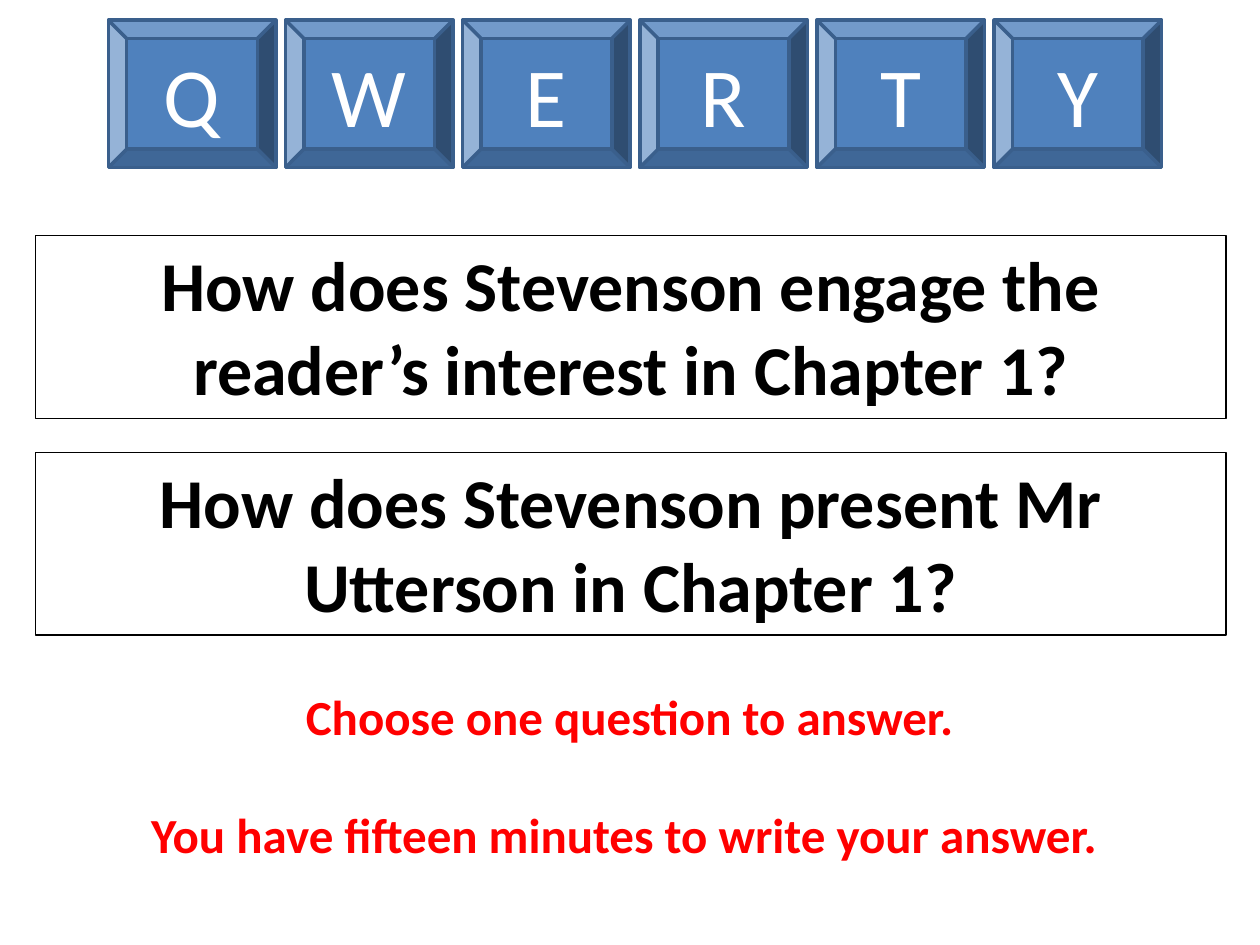
from pptx import Presentation
from pptx.dml.color import RGBColor
from pptx.enum.shapes import MSO_SHAPE as Shape
from pptx.enum.text import MSO_ANCHOR as Anchor, MSO_AUTO_SIZE as AutoSize, PP_ALIGN as Align
from pptx.util import Inches, Pt

# Content
KEYS = "QWERTY"
QUESTIONS = [
    "How does Stevenson engage the reader’s interest in Chapter 1?",
    "How does Stevenson present Mr Utterson in Chapter 1?",
]
INSTRUCTIONS = [
    "Choose one question to answer.",
    "You have fifteen minutes to write your answer. ",
]

FONT = "Calibri"
BLUE = RGBColor(0x4F, 0x81, 0xBD)
DARK_BLUE = RGBColor(0x3A, 0x5F, 0x8C)
WHITE = RGBColor(0xFF, 0xFF, 0xFF)
BLACK = RGBColor(0, 0, 0)
RED = RGBColor(0xFF, 0, 0)

# Layout in inches
KEY_LEFT, KEY_TOP, KEY_WIDTH, KEY_HEIGHT, KEY_STEP = 0.86, 0.16, 1.33, 1.17, 1.406
QUESTION_TOP, QUESTION_STEP = 1.87, 1.72


def write(paragraph, text, size, color, bold=False):
    paragraph.alignment = Align.CENTER
    run = paragraph.add_run()
    run.text = text
    run.font.name = FONT
    run.font.size = Pt(size)
    run.font.bold = bold
    run.font.color.rgb = color


def add_box(slide, left, top, width, height):
    box = slide.shapes.add_textbox(*map(Inches, (left, top, width, height)))
    box.text_frame.word_wrap = True
    box.text_frame.auto_size = AutoSize.SHAPE_TO_FIT_TEXT
    return box


def add_key(slide, left, letter):
    key = slide.shapes.add_shape(
        Shape.BEVEL, *map(Inches, (left, KEY_TOP, KEY_WIDTH, KEY_HEIGHT)))
    key.shadow.inherit = False
    key.fill.solid()
    key.fill.fore_color.rgb = BLUE
    key.line.color.rgb = DARK_BLUE
    key.line.width = Pt(2)
    key.text_frame.vertical_anchor = Anchor.MIDDLE
    write(key.text_frame.paragraphs[0], letter, 48, WHITE)


def main():
    presentation = Presentation()
    presentation.slide_width = Inches(10)
    presentation.slide_height = Inches(7.5)
    slide = presentation.slides.add_slide(presentation.slide_layouts[6])

    # Row of keyboard keys
    for index, letter in enumerate(KEYS):
        add_key(slide, KEY_LEFT + index * KEY_STEP, letter)

    # Framed questions
    for index, question in enumerate(QUESTIONS):
        box = add_box(slide, 0.28, QUESTION_TOP + index * QUESTION_STEP, 9.45, 1.45)
        box.line.color.rgb = BLACK
        box.line.width = Pt(0.75)
        write(box.text_frame.paragraphs[0], question, 40, BLACK, bold=True)

    # Instructions, one line apart
    box = add_box(slide, 0.29, 5.4, 9.41, 1.51)
    box.fill.solid()
    box.fill.fore_color.rgb = WHITE
    frame = box.text_frame
    for index, instruction in enumerate(INSTRUCTIONS):
        paragraph = frame.add_paragraph() if index else frame.paragraphs[0]
        paragraph.space_before = Pt(34 if index else 0)
        write(paragraph, instruction, 28, RED, bold=True)

    presentation.save("out.pptx")


if __name__ == "__main__":
    main()
